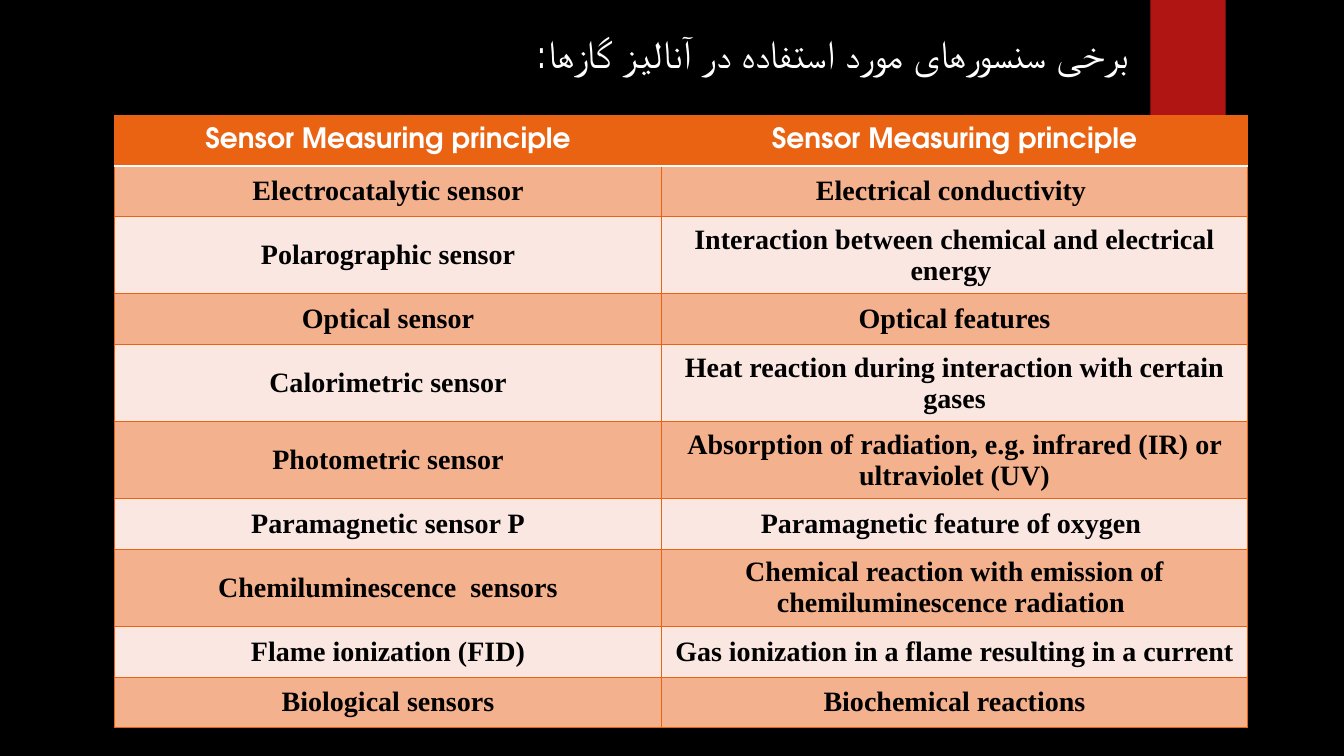
import dataclasses
import typing

import lxml.etree
import pptx
import pptx.dml.color
import pptx.enum.shapes
import pptx.enum.text
import pptx.oxml.ns
import pptx.util

RGB = pptx.dml.color.RGBColor
BLACK = RGB(0x00, 0x00, 0x00)
WHITE = RGB(0xFF, 0xFF, 0xFF)
RED = RGB(0xB0, 0x15, 0x13)
ORANGE = RGB(0xEA, 0x63, 0x12)
PEACH = RGB(0xF4, 0xB1, 0x8E)
BLUSH = RGB(0xFA, 0xE7, 0xE1)

SANS = "TeX Gyre Adventor"
SERIF = "Times New Roman"
WIDE = pptx.util.Inches(13.33)
HIGH = pptx.util.Inches(7.5)

# Row heights and column widths, in percent of the slide
LOW, TALL = 6.7, 10.2
COLS = (40.65, 43.65)

HEAD = "Sensor Measuring principle"
TITLE = "برخی سنسورهای مورد استفاده در آنالیز گازها:"


@dataclasses.dataclass(frozen=True)
class Box:
    """An area in percent of the slide's width and height."""
    left: float
    top: float
    width: float
    height: float

    def place(self) -> tuple[int, int, int, int]:
        return (share(self.left, WIDE), share(self.top, HIGH),
                share(self.width, WIDE), share(self.height, HIGH))


@dataclasses.dataclass(frozen=True)
class Sensor:
    name: str
    basis: str
    height: float = LOW


@dataclasses.dataclass(frozen=True)
class Look:
    fill: RGB
    font: dict[str, typing.Any]
    top: tuple[RGB, float] = (ORANGE, 0.75)
    base: tuple[RGB, float] = (ORANGE, 0.75)


RULE = (WHITE, 1.5)
BOLD = {"size": pptx.util.Pt(20), "bold": True}
HEADER = Look(ORANGE, BOLD | {"name": SANS}, base=RULE)
BODY = BOLD | {"name": SERIF}

SENSORS = (
    Sensor("Electrocatalytic sensor", "Electrical conductivity "),
    Sensor("Polarographic sensor",
           "Interaction between chemical and electrical energy ", TALL),
    Sensor("Optical sensor", "Optical features"),
    Sensor("Calorimetric sensor",
           "Heat reaction during interaction with certain gases", TALL),
    Sensor("Photometric sensor",
           "Absorption of radiation, e.g. infrared (IR) or ultraviolet (UV)", TALL),
    Sensor("Paramagnetic sensor P", "Paramagnetic feature of oxygen "),
    Sensor("Chemiluminescence  sensors",
           "Chemical reaction with emission of chemiluminescence radiation ", TALL),
    Sensor("Flame ionization (FID)",
           "Gas ionization in a flame resulting in a current"),
    Sensor("Biological sensors", "Biochemical reactions"),
)


def share(part: float, whole: int) -> int:
    return round(whole * part / 100)


def style(font, form: dict[str, typing.Any], color: RGB) -> None:
    for key, value in form.items():
        setattr(font, key, value)
    font.color.rgb = color


def edge(cell, side: str, color: RGB, width: float) -> None:
    """Add one border; sides must come in the order L, R, T, B."""
    qn = pptx.oxml.ns.qn
    line = lxml.etree.SubElement(cell._tc.get_or_add_tcPr(), qn(f"a:ln{side}"),
                                 w=str(pptx.util.Pt(width)))
    fill = lxml.etree.SubElement(line, qn("a:solidFill"))
    lxml.etree.SubElement(fill, qn("a:srgbClr"), val=str(color))


def fill_cell(cell, text: str, look: Look, color: RGB) -> None:
    thin = (ORANGE, 0.75)
    for side, pen in zip("LRTB", (thin, thin, look.top, look.base)):
        edge(cell, side, *pen)
    cell.fill.solid()
    cell.fill.fore_color.rgb = look.fill
    cell.vertical_anchor = pptx.enum.text.MSO_ANCHOR.MIDDLE
    para = cell.text_frame.paragraphs[0]
    para.alignment = pptx.enum.text.PP_ALIGN.CENTER
    run = para.add_run()
    run.text = text
    style(run.font, look.font, color)


def draw_bar(slide) -> None:
    kind = pptx.enum.shapes.MSO_SHAPE.RECTANGLE
    bar = slide.shapes.add_shape(kind, *Box(85.6, 0, 5.6, 16.67).place())
    bar.shadow.inherit = False
    bar.fill.solid()
    bar.fill.fore_color.rgb = RED
    bar.line.fill.background()


def draw_title(slide) -> None:
    title = slide.shapes.title
    sides = ("left", "top", "width", "height")
    for side, value in zip(sides, Box(13.2, 3.2, 71.55, 7.6).place()):
        setattr(title, side, value)
    frame = title.text_frame
    frame.word_wrap = True
    frame.auto_size = pptx.enum.text.MSO_AUTO_SIZE.NONE
    frame.vertical_anchor = pptx.enum.text.MSO_ANCHOR.MIDDLE
    para = frame.paragraphs[0]
    para.alignment = pptx.enum.text.PP_ALIGN.RIGHT
    para._p.get_or_add_pPr().set("rtl", "1")
    run = para.add_run()
    run.text = TITLE
    style(run.font, {"size": pptx.util.Pt(28), "name": SANS}, WHITE)
    lxml.etree.SubElement(run.font._element, pptx.oxml.ns.qn("a:cs"), typeface=SANS)


def draw_table(slide) -> None:
    rows = (Sensor(HEAD, HEAD), *SENSORS)
    area = Box(8.55, 15.27, sum(COLS), sum(row.height for row in rows))
    table = slide.shapes.add_table(len(rows), len(COLS), *area.place()).table
    table.horz_banding = False
    for col, width in zip(table.columns, COLS):
        col.width = share(width, WIDE)
    for i, row in enumerate(rows):
        table.rows[i].height = share(row.height, HIGH)
        look, color = HEADER, WHITE
        if i:
            top = RULE if i == 1 else (ORANGE, 0.75)
            look, color = Look(PEACH if i % 2 else BLUSH, BODY, top), BLACK
        for cell, text in zip(table.rows[i].cells, (row.name, row.basis)):
            fill_cell(cell, text, look, color)


def main() -> None:
    deck = pptx.Presentation()
    deck.slide_width, deck.slide_height = WIDE, HIGH
    slide = deck.slides.add_slide(deck.slide_layouts.get_by_name("Title Only"))
    slide.background.fill.solid()
    slide.background.fill.fore_color.rgb = BLACK
    draw_bar(slide)
    draw_title(slide)
    draw_table(slide)
    deck.save("out.pptx")


if __name__ == "__main__":
    main()
